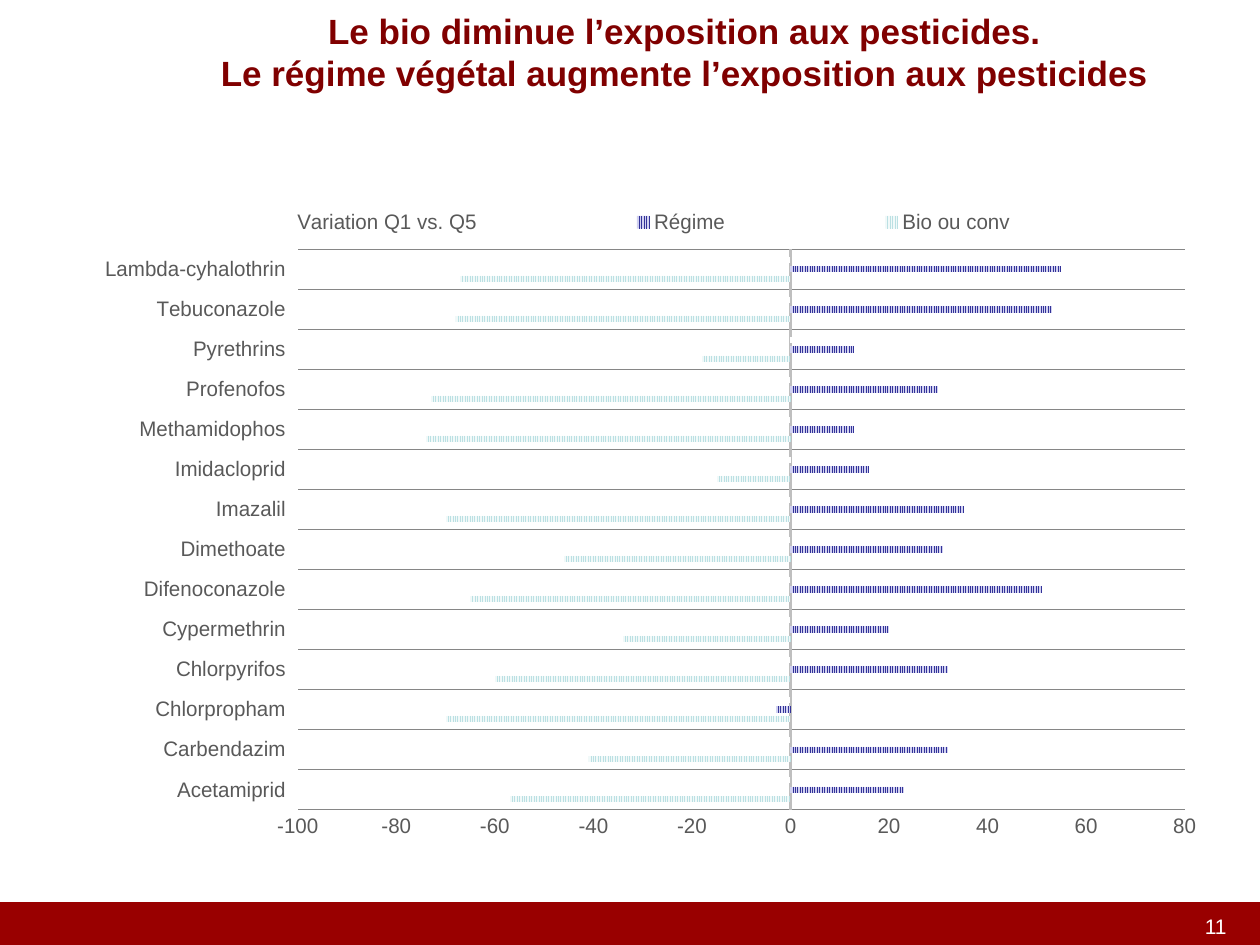
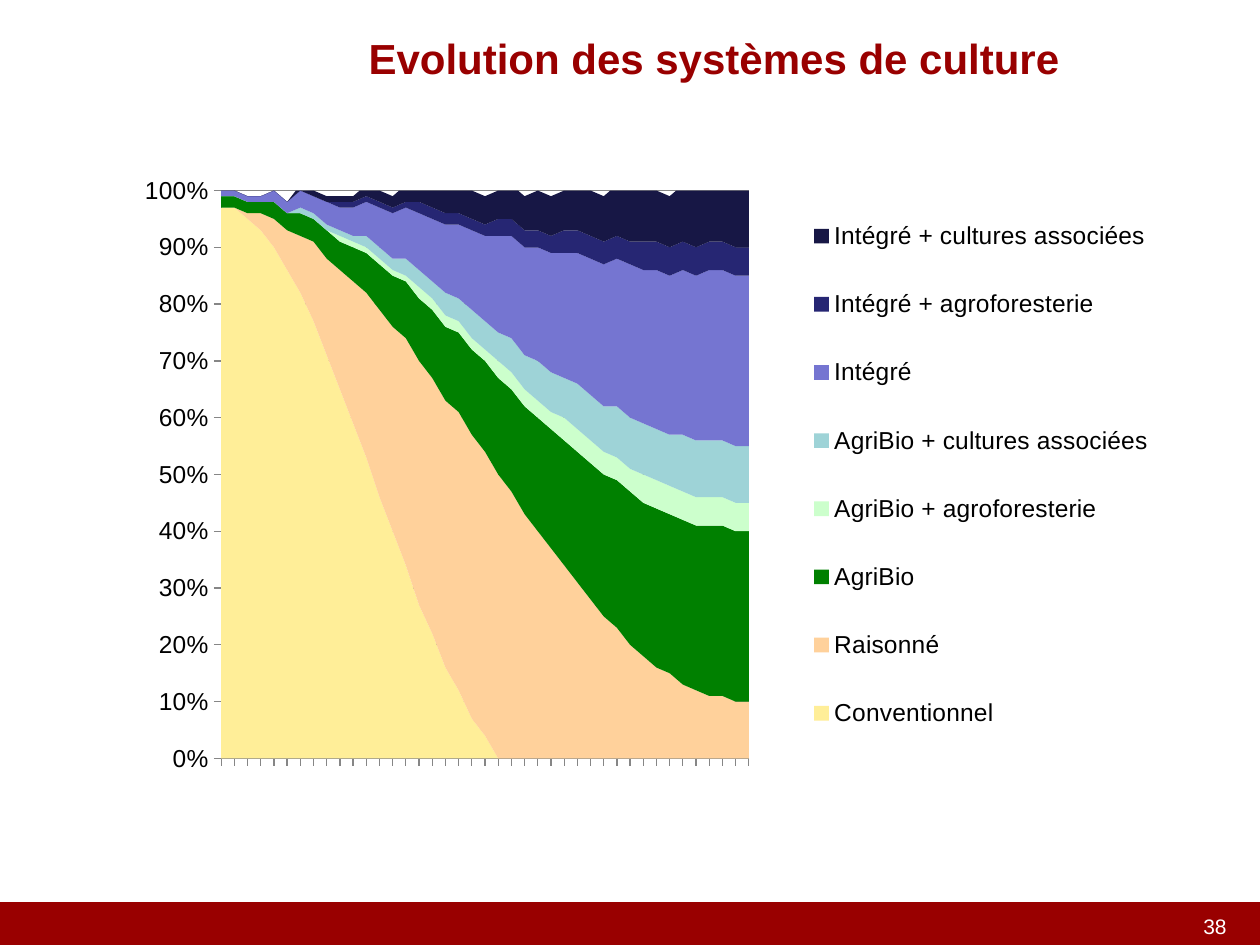
from dataclasses import dataclass
from math import cos, pi
from typing import Any, NamedTuple

from lxml import etree
from pptx import Presentation
from pptx.chart.data import CategoryChartData as Data
from pptx.dml.color import RGBColor as Rgb
from pptx.enum.chart import (
    XL_CHART_TYPE as Kind,
    XL_LEGEND_POSITION as Side,
    XL_TICK_LABEL_POSITION as Label,
    XL_TICK_MARK as Tick,
)
from pptx.enum.dml import MSO_PATTERN as Pattern
from pptx.enum.shapes import MSO_CONNECTOR as Link
from pptx.enum.text import MSO_ANCHOR as Anchor, PP_ALIGN as Align
from pptx.oxml.ns import qn
from pptx.util import Pt

FONT = "Arial"
WHITE = Rgb(0xFF, 0xFF, 0xFF)
BLACK = Rgb(0x00, 0x00, 0x00)
RED = Rgb(0x99, 0x00, 0x00)
MAROON = Rgb(0x80, 0x00, 0x00)
INK = Rgb(0x59, 0x59, 0x59)
GREY = Rgb(0x86, 0x86, 0x86)
SILVER = Rgb(0xBF, 0xBF, 0xBF)
TEAL = Rgb(0xBB, 0xE0, 0xE3)
MIST = Rgb(0xF1, 0xF9, 0xF9)
NAVY = Rgb(0x33, 0x33, 0x99)
LILAC = Rgb(0xD1, 0xD1, 0xF0)


class Box(NamedTuple):
    left: float
    top: float
    width: float
    height: float

    def points(self) -> list[int]:
        return [Pt(side) for side in self]


@dataclass
class Style:
    size: float
    color: Rgb
    bold: bool = False
    align: Any = Align.CENTER
    anchor: Any = Anchor.TOP


@dataclass
class Bars:
    name: str
    front: Rgb
    back: Rgb
    values: list[int]


@dataclass
class Crop:
    name: str
    color: Rgb
    values: list[float]


def apply(target: Any, values: dict[str, Any]) -> None:
    for name, value in values.items():
        setattr(target, name, value)


def style_font(font: Any, size: float, color: Rgb, bold: bool = False) -> None:
    apply(font, {"name": FONT, "size": Pt(size), "bold": bold})
    font.color.rgb = color


def style_line(line: Any, color: Rgb, width: float) -> None:
    line.color.rgb = color
    line.width = Pt(width)


def add_text(slide: Any, box: Box, lines: list[str], style: Style) -> None:
    frame = slide.shapes.add_textbox(*box.points()).text_frame
    apply(frame, {"word_wrap": True, "vertical_anchor": style.anchor})
    for i, line in enumerate(lines):
        para = frame.add_paragraph() if i else frame.paragraphs[0]
        para.alignment = style.align
        run = para.add_run()
        run.text = line
        style_font(run.font, style.size, style.color, style.bold)


def add_page(deck: Any, number: int) -> Any:
    """Add a blank slide with the red band and its number."""
    slide = deck.slides.add_slide(deck.slide_layouts[6])
    band = slide.shapes.add_connector(
        Link.STRAIGHT, Pt(720), Pt(528), Pt(0), Pt(528))
    style_line(band.line, RED, 25)
    etree.SubElement(band._element.spPr, qn("a:effectLst"))
    add_text(slide, Box(666, 518.4, 42, 36), [str(number)],
             Style(12, WHITE, align=Align.RIGHT))
    return slide


def place(parent: Any, index: int, box: Box, inner: bool = False) -> None:
    """Fix a chart part at fractions of the chart's size."""
    for old in parent.findall(qn("c:layout")):
        parent.remove(old)
    layout = etree.Element(qn("c:layout"))
    parent.insert(index, layout)
    manual = etree.SubElement(layout, qn("c:manualLayout"))
    items = [("layoutTarget", "inner")] if inner else []
    items += [("xMode", "edge"), ("yMode", "edge")]
    items += [(tag, str(value)) for tag, value in zip("xywh", box)]
    for tag, value in items:
        etree.SubElement(manual, qn(f"c:{tag}")).set("val", value)


def add_chart(slide: Any, kind: Any, box: Box, cats: list[str],
              series: list[Any], form: str, style: Style,
              side: Any, plot: Box, key: Box) -> Any:
    data = Data(number_format=form)
    data.categories = cats
    for item in series:
        data.add_series(item.name, item.values)
    chart = slide.shapes.add_chart(kind, *box.points(), data).chart
    apply(chart, {"has_title": False, "has_legend": True})
    style_font(chart.font, style.size, style.color)
    apply(chart.legend, {"position": side, "include_in_layout": False})
    style_font(chart.legend.font, style.size, style.color)
    chart.plots[0].vary_by_categories = False
    place(chart._chartSpace.chart.plotArea, 0, plot, inner=True)
    place(chart.legend._element, 1, key)
    for axis in (chart.category_axis, chart.value_axis):
        style_font(axis.tick_labels.font, style.size, style.color)
    return chart


def draw_diet(deck: Any) -> None:
    slide = add_page(deck, 11)
    cats = ["Acetamiprid", "Carbendazim", "Chlorpropham", "Chlorpyrifos",
            "Cypermethrin", "Difenoconazole", "Dimethoate", "Imazalil",
            "Imidacloprid", "Methamidophos", "Profenofos", "Pyrethrins",
            "Tebuconazole", "Lambda-cyhalothrin"]
    bars = [
        Bars("Bio ou conv", TEAL, MIST,
             [-57, -41, -70, -60, -34, -65, -46,
              -70, -15, -74, -73, -18, -68, -67]),
        Bars("Régime", NAVY, LILAC,
             [23, 32, -3, 32, 20, 51, 31, 35, 16, 13, 30, 13, 53, 55]),
        Bars("Variation Q1 vs. Q5", WHITE, WHITE,
             [-49, -30, -71, -50, -24, -49, -30,
              -60, -8, -71, -65, 23, -53, -51]),
    ]
    chart = add_chart(slide, Kind.BAR_CLUSTERED, Box(60, 100, 623.5, 386),
                      cats, bars, "General", Style(12, INK), Side.TOP,
                      Box(0.18, 0.11, 0.83, 0.83), Box(0.01, 0.04, 0.97, 0.06))
    apply(chart.plots[0], {"gap_width": 227, "overlap": -48})
    for item, drawn in zip(bars, chart.plots[0].series):
        drawn.invert_if_negative = False
        fill = drawn.format.fill
        fill.patterned()
        fill.pattern = Pattern.NARROW_VERTICAL
        fill.fore_color.rgb = item.front
        fill.back_color.rgb = item.back
    names, scale = chart.category_axis, chart.value_axis
    apply(names, {"major_tick_mark": Tick.NONE, "has_major_gridlines": True,
                  "tick_label_position": Label.LOW})
    style_line(names.format.line, SILVER, 1.5)
    style_line(names.major_gridlines.format.line, GREY, 0.75)
    apply(scale, {"major_tick_mark": Tick.NONE, "has_major_gridlines": False,
                  "minimum_scale": -100, "maximum_scale": 80,
                  "major_unit": 20})
    scale.format.line.fill.background()
    add_text(slide, Box(105, 2, 578, 124),
             ["Le bio diminue l’exposition aux pesticides. ",
              "Le régime végétal augmente l’exposition aux pesticides "],
             Style(20, MAROON, bold=True))


def ease(start: float, end: float) -> list[float]:
    """Yearly shares on a half cosine wave from 2010 to 2050."""
    return [round(start + (end - start) * (1 - cos(pi * t / 40)) / 2, 2)
            for t in range(41)]


def draw_crops(deck: Any) -> None:
    slide = add_page(deck, 38)
    add_text(slide, Box(144, 6, 528, 54), ["Evolution des systèmes de culture"],
             Style(24, RED, bold=True, anchor=Anchor.MIDDLE))
    fall = [0.97, 0.97, 0.95, 0.93, 0.9, 0.86, 0.82, 0.77, 0.71, 0.65, 0.59,
            0.53, 0.46, 0.4, 0.34, 0.27, 0.22, 0.16, 0.12, 0.07, 0.04]
    rise = [0, 0, 0.01, 0.03, 0.05, 0.07, 0.1, 0.14, 0.17, 0.21, 0.25,
            0.29, 0.33, 0.36, 0.4, 0.43, 0.45, 0.47, 0.49, 0.5, 0.5]
    crops = [
        Crop("Conventionnel", Rgb(0xFF, 0xEE, 0x98), fall + [0] * 20),
        Crop("Raisonné", Rgb(0xFF, 0xD1, 0x9B), rise + ease(0.97, 0.1)[21:]),
        Crop("AgriBio", Rgb(0x00, 0x80, 0x00), ease(0.02, 0.3)),
        Crop("AgriBio + agroforesterie", Rgb(0xCC, 0xFF, 0xCC), ease(0, 0.05)),
        Crop("AgriBio + cultures associées", Rgb(0x9E, 0xD3, 0xD7),
             ease(0, 0.1)),
        Crop("Intégré", Rgb(0x75, 0x75, 0xD1), ease(0.01, 0.3)),
        Crop("Intégré + agroforesterie", Rgb(0x26, 0x26, 0x73), ease(0, 0.05)),
        Crop("Intégré + cultures associées", Rgb(0x17, 0x17, 0x45),
             ease(0, 0.1)),
    ]
    chart = add_chart(slide, Kind.AREA_STACKED, Box(54, 88.5, 629.5, 385),
                      [str(year) for year in range(2010, 2051)], crops, "0%",
                      Style(14, BLACK), Side.RIGHT,
                      Box(0.115, 0.053, 0.479, 0.843),
                      Box(0.62, 0.04, 0.37, 0.87))
    for crop, drawn in zip(crops, chart.plots[0].series):
        drawn.format.fill.solid()
        drawn.format.fill.fore_color.rgb = crop.color
    years, scale = chart.category_axis, chart.value_axis
    apply(years, {"major_tick_mark": Tick.OUTSIDE,
                  "has_major_gridlines": False,
                  "tick_label_position": Label.NONE})
    apply(scale, {"major_tick_mark": Tick.OUTSIDE, "has_major_gridlines": True,
                  "minimum_scale": 0, "maximum_scale": 1, "major_unit": 0.1})
    apply(scale.tick_labels, {"number_format": "0%",
                              "number_format_is_linked": False})
    for part in (years, scale, scale.major_gridlines):
        style_line(part.format.line, GREY, 0.75)
    for cross in scale._element.findall(qn("c:crossBetween")):
        cross.set("val", "midCat")


def main() -> None:
    deck = Presentation()
    apply(deck, {"slide_width": Pt(720), "slide_height": Pt(540)})
    draw_diet(deck)
    draw_crops(deck)
    deck.save("out.pptx")


if __name__ == "__main__":
    main()
